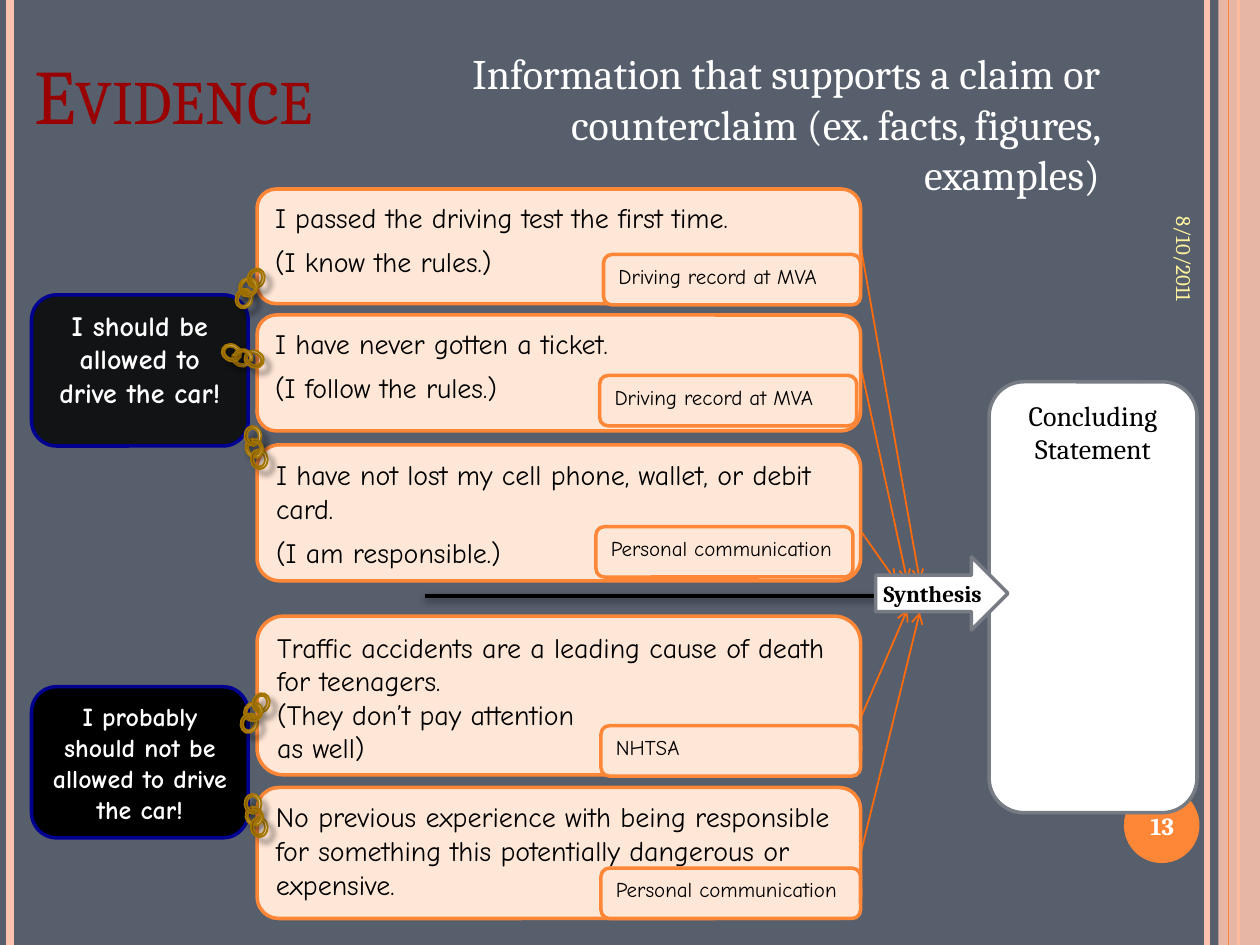
from lxml import etree
from pptx import Presentation, util as u
from pptx.dml.color import RGBColor
from pptx.enum import shapes, text
from pptx.oxml.ns import qn

# The slide is a grid of 100 columns by 75 rows.
COLS, ROWS = 100, 75
CELL = u.Inches(10) // COLS
SERIF, HAND = "Cambria", "Comic Neue"
ORANGE, PEACH, PINK, GREY = "FE8637", "FFE7D7", "FEC3AE", "777C84"
BLACK, WHITE, NAVY, GOLD = "000000", "FFFFFF", "000090", "A47400"
CARD_COL, CARD_COLS, TAG_ROWS = 20.4, 47.9, 4
PRESET = shapes.MSO_SHAPE
LEFT, CENTER, RIGHT = text.PP_ALIGN.LEFT, text.PP_ALIGN.CENTER, text.PP_ALIGN.RIGHT

# row, rows, paragraphs, space after, (tag column, tag row, tag columns, tag)
CARDS = [
    (15, 9.1, ["I passed the driving test the first time.", "(I know the rules.)"], 6,
     (47.9, 20.2, 20.4, "Driving record at MVA")),
    (25, 9.2, ["I have never gotten a ticket.", "(I follow the rules.)"], 6,
     (47.6, 29.8, 20.4, "Driving record at MVA")),
    (35.3, 10.8, ["I have not lost my cell phone, wallet, or debit card.",
                  "(I am responsible.)"], 6,
     (47.3, 41.8, 20.4, "Personal communication")),
    (48.9, 12.6, ["Traffic accidents are a leading cause of death for teenagers.",
                  "(They don’t pay attention", "as well)"], 0,
     (47.7, 57.6, 20.6, "NHTSA")),
    (62.5, 10.4, ["No previous experience with being responsible for something "
                  "this potentially dangerous or expensive."], 0,
     (47.7, 68.9, 20.6, "Personal communication")),
]
EVIDENCE_ARROWS = [
    ((68, 69), (73, 48.6)), ((68.3, 19.5), (73, 46.1)), ((68.4, 29.5), (72, 46.1)),
    ((68, 41.7), (71.1, 46.1)), ((68, 57.7), (72, 48.4)),
]
# Each chain is a half link, two rings and a half link: column, row, turn, flips
CHAIN_POSES = {
    "falling": [(0, 1.05, 261.3, "H"), (0, 0, 356.4, ""),
                (0.5, 1.85, 356.4, ""), (0, 1.1, 77, "")],
    "rising": [(0.2, 0.8, 115.2, "HV"), (0, 1.6, 20.1, "V"),
               (0.95, 0, 20.1, "V"), (0.25, 0.8, 299.5, "V")],
    "level": [(0.7, 0.5, 200.3, "H"), (0, 0, 295.5, ""),
              (1.8, 0.5, 295.5, ""), (0.8, 0.5, 16.1, "")],
}
CHAINS = [("falling", 19.4, 33.8), ("rising", 18.7, 21.3), ("level", 17.7, 27.2),
          ("falling", 19.4, 63), ("rising", 19.1, 55)]


def color(hex_code):
    return RGBColor.from_string(hex_code)


def cells(*counts):
    return [u.Emu(round(count * CELL)) for count in counts]


def sub(parent, tag, **attributes):
    child = etree.SubElement(parent, qn(tag))
    for key, value in attributes.items():
        child.set(key, str(value))
    return child


def set_opacity(item, percent):
    """Make the solid colour under item partly transparent."""
    sub(next(item.iter(qn("a:srgbClr"))), "a:alpha", val=percent * 1000)


def add_shadow(effects, opacity, blur, distance, angle):
    outer = sub(effects, "a:outerShdw", blurRad=u.Pt(blur), dist=u.Pt(distance),
                dir=angle * 60000, rotWithShape=0)
    sub(sub(outer, "a:srgbClr", val=BLACK), "a:alpha", val=opacity * 1000)


def write(frame, paragraphs, size, font, ink, bold=False, align=LEFT,
          anchor=text.MSO_ANCHOR.TOP, after=0, wrap=True):
    frame.word_wrap = wrap
    frame.auto_size = text.MSO_AUTO_SIZE.NONE
    frame.vertical_anchor = anchor
    for index, words in enumerate(paragraphs):
        paragraph = frame.add_paragraph() if index else frame.paragraphs[0]
        paragraph.alignment = align
        if after:
            paragraph.space_after = u.Pt(after)
        run = paragraph.add_run()
        run.text = words
        run.font.size, run.font.name, run.font.bold = u.Pt(size), font, bold
        run.font.color.rgb = color(ink)


def add_block(slide, preset, box, fill, line=None, width=2):
    block = slide.shapes.add_shape(preset, *cells(*box))
    block.shadow.inherit = False
    block.fill.solid()
    block.fill.fore_color.rgb = color(fill)
    if line:
        block.line.color.rgb = color(line)
        block.line.width = u.Pt(width)
    else:
        block.line.fill.background()
    return block


def add_line(slide, start, end, ink, width, arrow=False):
    """Draw a straight line and return its effect list."""
    line = slide.shapes.add_connector(shapes.MSO_CONNECTOR.STRAIGHT, *cells(*start, *end))
    line.line.color.rgb = color(ink)
    line.line.width = u.Pt(width)
    if arrow:
        sub(line.line._get_or_add_ln(), "a:tailEnd", type="arrow")
    return sub(line._element.spPr, "a:effectLst")


def add_label(slide, box, words, size, ink, align, bold=False, turn=0):
    label = slide.shapes.add_textbox(*cells(*box))
    label.rotation = turn
    write(label.text_frame, [words], size, SERIF, ink, bold, align, text.MSO_ANCHOR.MIDDLE)


def add_border(slide):
    for col, ink, width in [(95.8, PINK, 3), (0.8, PINK, 4.5), (98.3, ORANGE, 1.5)]:
        add_line(slide, (col, 0), (col, ROWS), ink, width)
    band = add_block(slide, PRESET.RECTANGLE, (96.7, 0, 3.3, ROWS), PINK)
    set_opacity(band._element.spPr, 87)
    add_line(slide, (97.5, 0), (97.5, ROWS), ORANGE, 0.75)
    add_block(slide, PRESET.OVAL, (89.2, 62.5, 6, 6), ORANGE)
    add_label(slide, (83, 11.8, 22, 4.2), "8/10/2011", 12, "FFF39D", RIGHT, turn=90)
    add_label(slide, (88.9, 62.7, 6.7, 5.7), "13", 14, WHITE, CENTER, bold=True)


def place(holder, box):
    holder.left, holder.top, holder.width, holder.height = cells(*box)
    return holder.text_frame


def fill_placeholders(slide):
    title = place(slide.shapes.title, (1.7, 3.3, 30.8, 10.8))
    write(title, ["Evidence"], 44, SERIF, "990000")
    title.paragraphs[0].runs[0].font._element.set("cap", "small")

    definition = place(slide.placeholders[1], (30.8, 3.3, 57.5, 14.2))
    write(definition, ["Information that supports a claim or counterclaim "
                       "(ex. facts, figures, examples)"], 24, SERIF, WHITE, align=RIGHT)
    properties = definition.paragraphs[0]._p.get_or_add_pPr()
    properties.set("marL", "0")
    properties.set("indent", "0")
    sub(properties, "a:buNone")


def add_claim(slide, row, words, size):
    claim = add_block(slide, PRESET.ROUNDED_RECTANGLE, (2.5, row, 17.2, 12), BLACK, NAVY)
    write(claim.text_frame, [words], size, HAND, WHITE, True, CENTER)
    return claim


def add_card(slide, row, rows, paragraphs, after, tag):
    card = add_block(slide, PRESET.ROUNDED_RECTANGLE,
                     (CARD_COL, row, CARD_COLS, rows), PEACH, ORANGE)
    write(card.text_frame, paragraphs, 16, HAND, BLACK, after=after)
    tag_col, tag_row, tag_cols, source = tag
    label = add_block(slide, PRESET.ROUNDED_RECTANGLE,
                      (tag_col, tag_row, tag_cols, TAG_ROWS), PEACH, ORANGE)
    write(label.text_frame, [source], 12, HAND, BLACK)


def add_chain(slide, pose, col, row):
    half = (PRESET.BLOCK_ARC, 1.55, 1.4, (108, 0.27, 0.15), 1.8)
    ring = (PRESET.DONUT, 1.35, 1.6, (0.16,), 5)
    for kind, (right, down, turn, flips) in zip((half, ring, ring, half), CHAIN_POSES[pose]):
        preset, width, height, adjustments, distance = kind
        link = add_block(slide, preset, (col + right, row + down, width, height), GOLD, GOLD, 1)
        link.rotation = turn
        for axis in flips:
            link._element.spPr.xfrm.set("flip" + axis, "1")
        for index, value in enumerate(adjustments):
            link.adjustments[index] = value
        link.fill.gradient()
        link.fill.gradient_angle = 0
        stops = next(link._element.iter(qn("a:gsLst")))
        stops[:] = []
        for share, ink in [(0, "4D3500"), (50, GOLD), (100, WHITE)]:
            sub(sub(stops, "a:gs", pos=share * 1000), "a:srgbClr", val=ink)
        add_shadow(link._element.spPr.find(qn("a:effectLst")), 35, 3.1, distance, 45)


def main():
    deck = Presentation()
    deck.slide_width, deck.slide_height = cells(COLS, ROWS)
    slide = deck.slides.add_slide(deck.slide_layouts[1])
    slide.background.fill.solid()
    slide.background.fill.fore_color.rgb = color("575F6D")
    add_border(slide)
    fill_placeholders(slide)

    claim = add_claim(slide, 23.4, "I should be allowed to drive the car!", 16)
    set_opacity(claim._element.spPr, 80)
    add_claim(slide, 54.5, "I probably should not be allowed to drive the car!", 14.8)
    divider = add_line(slide, (33.7, 47.3), (70.8, 47.3), BLACK, 2.75)
    add_shadow(divider, 42, 4, 1.6, 90)
    conclusion = add_block(slide, PRESET.ROUNDED_RECTANGLE, (78.5, 30.3, 16.5, 34.2), WHITE, GREY)
    write(conclusion.text_frame, ["Concluding Statement"], 16, SERIF, BLACK, align=CENTER)

    for start, end in EVIDENCE_ARROWS:
        add_line(slide, start, end, "FF6B0A", 1, arrow=True)
    for card in CARDS:
        add_card(slide, *card)
    for chain in CHAINS:
        add_chain(slide, *chain)
    synthesis = add_block(slide, PRESET.RIGHT_ARROW, (69.5, 44.2, 10.5, 5.8), WHITE, GREY)
    write(synthesis.text_frame, ["Synthesis"], 13.2, SERIF, BLACK, True, CENTER,
          text.MSO_ANCHOR.MIDDLE, wrap=False)
    deck.save("out.pptx")


if __name__ == "__main__":
    main()
